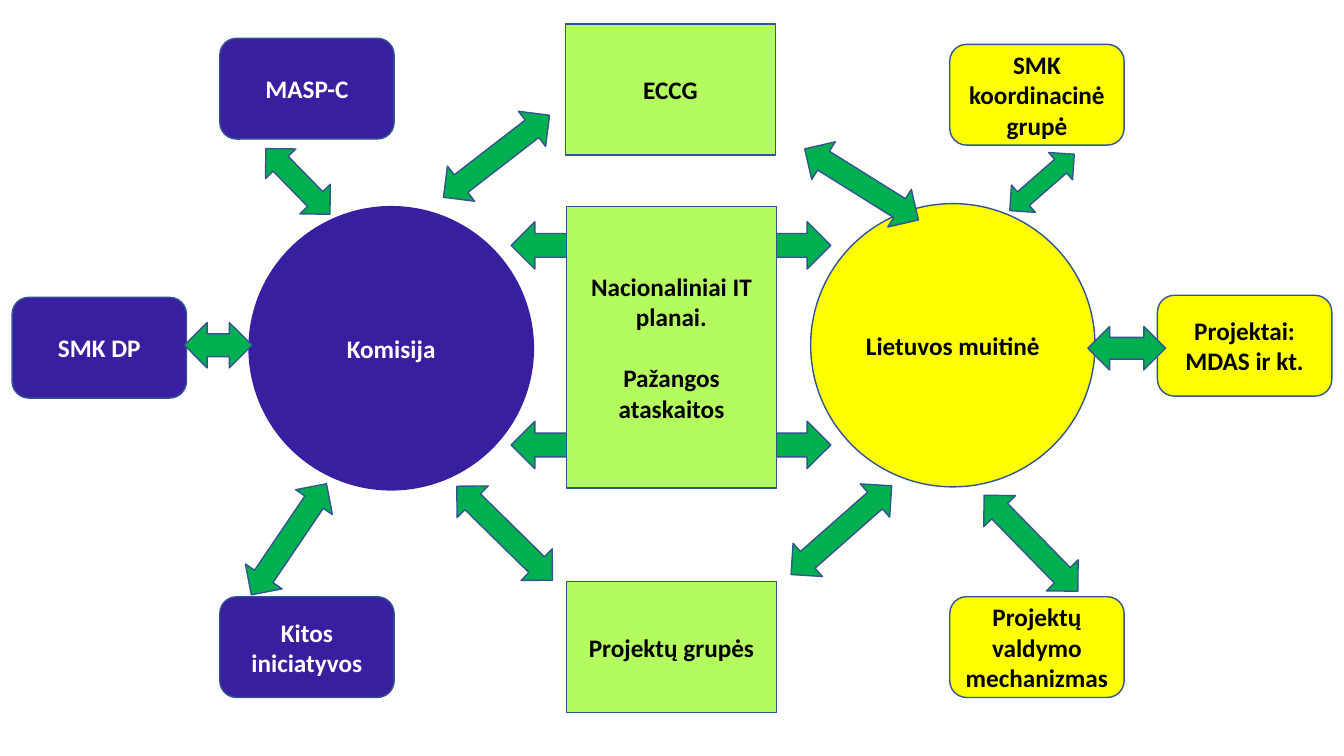
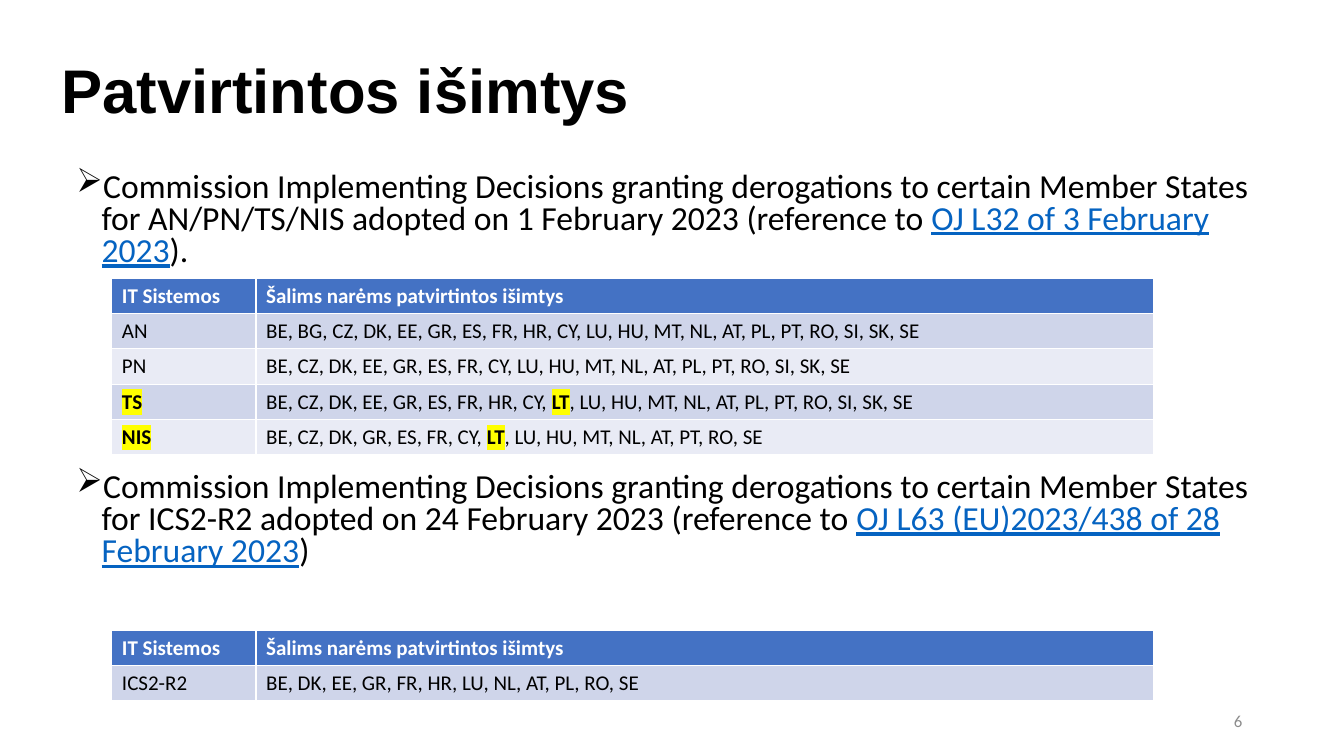
from dataclasses import dataclass

import pptx
import pptx.dml.color
import pptx.enum.shapes
import pptx.enum.text
import pptx.oxml.ns
import pptx.util
from lxml import etree

Inches = pptx.util.Inches
Pt = pptx.util.Pt
MSO_SHAPE = pptx.enum.shapes.MSO_SHAPE
PP_ALIGN = pptx.enum.text.PP_ALIGN
MSO_ANCHOR = pptx.enum.text.MSO_ANCHOR

BLACK, WHITE, GREY = "000000", "FFFFFF", "8C8C8C"
INDIGO, YELLOW, LIME, GREEN = "3A1EA0", "FFFF00", "B4FB5F", "00B050"
OUTLINE, LINK = "325491", "0563C1"
HEADER_FILL, BAND_FILLS = "4472C4", ("CFD5EA", "E9EBF5")
BODY_FONT, TITLE_FONT = "Calibri", "Arial"


@dataclass(frozen=True)
class Kind:
    """Look and size shared by a group of diagram nodes."""
    preset: int
    fill: str
    line: str
    ink: str
    width: float
    height: float


COMMISSION = Kind(MSO_SHAPE.FLOWCHART_CONNECTOR, INDIGO, INDIGO, WHITE, 2.82, 2.81)
CUSTOMS = Kind(MSO_SHAPE.FLOWCHART_CONNECTOR, YELLOW, OUTLINE, BLACK, 2.82, 2.81)
EU_TOPIC = Kind(MSO_SHAPE.ROUNDED_RECTANGLE, INDIGO, OUTLINE, WHITE, 1.73, 1)
NATIONAL_TOPIC = Kind(MSO_SHAPE.ROUNDED_RECTANGLE, YELLOW, OUTLINE, BLACK, 1.73, 1)
SHARED_GROUP = Kind(MSO_SHAPE.RECTANGLE, LIME, OUTLINE, BLACK, 2.08, 1.3)
SHARED_PLANS = Kind(MSO_SHAPE.RECTANGLE, LIME, OUTLINE, BLACK, 2.08, 2.79)


@dataclass(frozen=True)
class Node:
    left: float
    top: float
    kind: Kind
    paragraphs: tuple[str, ...]
    gap: float = 0


@dataclass(frozen=True)
class Arrow:
    left: float
    top: float
    rotation: float = 0
    width: float = 1.33
    height: float = 0.44


@dataclass(frozen=True)
class Decision:
    """A bullet with a cited reference and the table that belongs to it."""
    top: float
    lead: str
    reference: str
    tail: str
    table_top: float
    systems: tuple[tuple[str, str], ...]


NODES = (
    Node(5.61, 0.24, SHARED_GROUP, ("ECCG",)),
    Node(2.47, 2.05, COMMISSION, ("Komisija",)),
    Node(8.04, 2.02, CUSTOMS, ("Lietuvos muitinė",)),
    Node(9.42, 0.44, NATIONAL_TOPIC, ("SMK koordinacinė grupė",)),
    Node(2.18, 5.92, EU_TOPIC, ("Kitos iniciatyvos",)),
    Node(9.42, 5.92, NATIONAL_TOPIC, ("Projektų valdymo mechanizmas",)),
    Node(2.18, 0.38, EU_TOPIC, ("MASP-C",)),
    Node(11.48, 2.93, NATIONAL_TOPIC, ("Projektai:", "MDAS ir kt.")),
    Node(0.12, 2.95, EU_TOPIC, ("SMK DP",)),
    Node(5.62, 5.77, SHARED_GROUP, ("Projektų grupės",)),
)
PLANS = Node(5.62, 2.05, SHARED_PLANS,
             ("Nacionaliniai IT planai.", "Pažangos ataskaitos"), gap=22)

ARROWS = (
    Arrow(4.26, 1.33, 322.3),
    Arrow(9.56, 5.17, 45.7),
    Arrow(5.07, 4.18, width=3.17, height=0.47),
    Arrow(7.68, 5.04, 318.6),
    Arrow(4.34, 5.07, 44.5),
    Arrow(2.2, 5.13, 124.1),
    Arrow(2.5, 1.59, 45.7, 0.91, 0.42),
    Arrow(9.91, 1.63, 318.8, 0.85, 0.36),
    Arrow(10.79, 3.24, width=0.77, height=0.43),
    Arrow(1.83, 3.2, width=0.67, height=0.45),
    Arrow(7.88, 1.61, 32),
    Arrow(5.07, 2.2, width=3.17, height=0.47),
)

HEADINGS = ("IT Sistemos", "Šalims narėms patvirtintos išimtys")
COLUMN_WIDTHS = (1.43, 8.9)
ROW_HEIGHT = 0.35
HOME_COUNTRY = "LT"
LEAD = "Commission Implementing Decisions granting derogations to certain Member States for "
DECISIONS = (
    Decision(
        1.66, LEAD + "AN/PN/TS/NIS adopted on 1 February 2023 (reference to ",
        "OJ L32 of 3 February 2023", ").", 2.76,
        (
            ("AN", "BE, BG, CZ, DK, EE, GR, ES, FR, HR, CY, LU, HU, MT, NL, AT, PL, PT, RO, SI, SK, SE"),
            ("PN", "BE, CZ, DK, EE, GR, ES, FR, CY, LU, HU, MT, NL, AT, PL, PT, RO, SI, SK, SE"),
            ("TS", "BE, CZ, DK, EE, GR, ES, FR, HR, CY, LT, LU, HU, MT, NL, AT, PL, PT, RO, SI, SK, SE"),
            ("NIS", "BE, CZ, DK, GR, ES, FR, CY, LT, LU, HU, MT, NL, AT, PT, RO, SE"),
        ),
    ),
    Decision(
        4.64, LEAD + "ICS2-R2 adopted on 24 February 2023 (reference to ",
        "OJ L63 (EU)2023/438 of 28 February 2023", ")", 6.25,
        (("ICS2-R2", "BE, DK, EE, GR, FR, HR, LU, NL, AT, PL, RO, SE"),),
    ),
)


def rgb(code: str) -> pptx.dml.color.RGBColor:
    return pptx.dml.color.RGBColor.from_string(code)


def set_font(paragraph, size: float, color: str, bold: bool = False,
             face: str = BODY_FONT) -> None:
    font = paragraph.font
    font.name, font.size, font.bold = face, Pt(size), bold
    font.color.rgb = rgb(color)


def add_outlined(slide, preset: int, left: float, top: float, width: float,
                 height: float, fill: str, line: str):
    shape = slide.shapes.add_shape(
        preset, Inches(left), Inches(top), Inches(width), Inches(height))
    shape.shadow.inherit = False
    shape.fill.solid()
    shape.fill.fore_color.rgb = rgb(fill)
    shape.line.color.rgb = rgb(line)
    shape.line.width = Pt(1)
    return shape


def add_node(slide, node: Node) -> None:
    kind = node.kind
    shape = add_outlined(slide, kind.preset, node.left, node.top,
                         kind.width, kind.height, kind.fill, kind.line)
    frame = shape.text_frame
    frame.word_wrap = True
    frame.vertical_anchor = MSO_ANCHOR.MIDDLE
    for index, text in enumerate(node.paragraphs):
        paragraph = frame.add_paragraph() if index else frame.paragraphs[0]
        paragraph.text = text
        paragraph.alignment = PP_ALIGN.CENTER
        if index:
            paragraph.space_before = Pt(node.gap)
        set_font(paragraph, 18, kind.ink, bold=True)


def add_arrow(slide, arrow: Arrow) -> None:
    shape = add_outlined(slide, MSO_SHAPE.LEFT_RIGHT_ARROW, arrow.left, arrow.top,
                         arrow.width, arrow.height, GREEN, OUTLINE)
    shape.rotation = arrow.rotation


def add_text_box(slide, left: float, top: float, width: float, height: float,
                 anchor=MSO_ANCHOR.MIDDLE):
    """Add a wrapping text box and return its first paragraph."""
    box = slide.shapes.add_textbox(
        Inches(left), Inches(top), Inches(width), Inches(height))
    box.text_frame.word_wrap = True
    box.text_frame.vertical_anchor = anchor
    return box.text_frame.paragraphs[0]


def add_title(slide, text: str) -> None:
    title = add_text_box(slide, 0.51, 0.32, 12, 1.22)
    title.text = text
    title.line_spacing = 0.9
    set_font(title, 44, BLACK, bold=True, face=TITLE_FONT)


def add_page_number(slide, number: int) -> None:
    page = add_text_box(slide, 9.42, 6.95, 3, 0.4)
    page.text = str(number)
    page.alignment = PP_ALIGN.RIGHT
    set_font(page, 12, GREY)


def set_bullet(paragraph, symbol: str, margin: float, indent: float) -> None:
    properties = paragraph._p.get_or_add_pPr()
    properties.set("marL", str(Inches(margin)))
    properties.set("indent", str(Inches(indent)))
    bullet = etree.SubElement(properties, pptx.oxml.ns.qn("a:buChar"))
    bullet.set("char", symbol)


def add_run(paragraph, text: str):
    run = paragraph.add_run()
    run.text = text
    return run


def add_highlighted(paragraph, text: str) -> None:
    run = add_run(paragraph, text)
    run.font.bold = True
    highlight = etree.SubElement(run.font._element, pptx.oxml.ns.qn("a:highlight"))
    etree.SubElement(highlight, pptx.oxml.ns.qn("a:srgbClr")).set("val", YELLOW)


def add_statement(slide, decision: Decision) -> None:
    statement = add_text_box(slide, 0.16, decision.top, 12.7, 1.1, MSO_ANCHOR.TOP)
    set_bullet(statement, "➢", 0.75, -0.25)
    statement.line_spacing = 0.8
    statement.space_before = Pt(5)
    set_font(statement, 24, BLACK)
    add_run(statement, decision.lead)
    reference = add_run(statement, decision.reference)
    reference.font.color.rgb = rgb(LINK)
    reference.font.underline = True
    add_run(statement, decision.tail)


def fill_cell(cell, fill: str):
    cell.fill.solid()
    cell.fill.fore_color.rgb = rgb(fill)
    return cell.text_frame.paragraphs[0]


def add_exemptions(slide, decision: Decision) -> None:
    row_count = len(decision.systems) + 1
    table = slide.shapes.add_table(
        row_count, len(HEADINGS), Inches(1.11), Inches(decision.table_top),
        Inches(sum(COLUMN_WIDTHS)), Inches(ROW_HEIGHT * row_count)).table
    for column, width, heading in zip(table.columns, COLUMN_WIDTHS, HEADINGS):
        column.width = Inches(width)
    for column_index, heading in enumerate(HEADINGS):
        paragraph = fill_cell(table.cell(0, column_index), HEADER_FILL)
        paragraph.text = heading
        set_font(paragraph, 15, WHITE, bold=True)
    for row, (system, countries) in enumerate(decision.systems, start=1):
        band = BAND_FILLS[(row - 1) % 2]
        name = fill_cell(table.cell(row, 0), band)
        members = fill_cell(table.cell(row, 1), band)
        for paragraph in (name, members):
            set_font(paragraph, 15, BLACK)
        before, home, after = countries.partition(HOME_COUNTRY)
        add_run(members, before)
        if home:
            add_highlighted(name, system)
            add_highlighted(members, home)
            add_run(members, after)
        else:
            add_run(name, system)


def build_governance(slide) -> None:
    for node in NODES:
        add_node(slide, node)
    for arrow in ARROWS:
        add_arrow(slide, arrow)
    add_node(slide, PLANS)


def build_derogations(slide) -> None:
    add_title(slide, "Patvirtintos išimtys")
    for decision in DECISIONS:
        add_statement(slide, decision)
        add_exemptions(slide, decision)
    add_page_number(slide, 6)


def main() -> None:
    deck = pptx.Presentation()
    deck.slide_width, deck.slide_height = Inches(13.33), Inches(7.5)
    blank = deck.slide_layouts[6]
    for build in (build_governance, build_derogations):
        build(deck.slides.add_slide(blank))
    deck.save("out.pptx")


if __name__ == "__main__":
    main()
